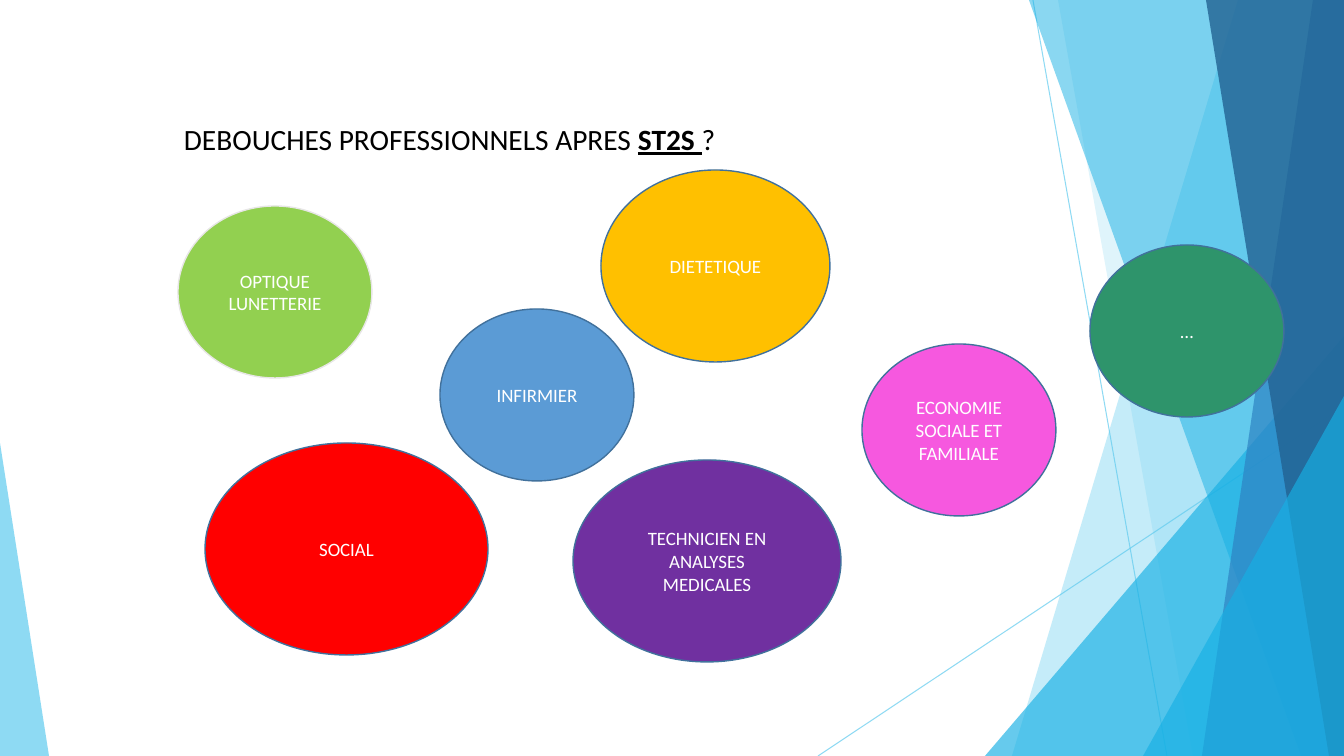
from dataclasses import dataclass

from lxml.etree import SubElement
from pptx import Presentation
from pptx.dml.color import RGBColor
from pptx.enum.shapes import MSO_CONNECTOR, MSO_SHAPE
from pptx.enum.text import MSO_ANCHOR, PP_ALIGN
from pptx.oxml.ns import qn
from pptx.shapes.autoshape import Shape
from pptx.shapes.shapetree import SlideShapes
from pptx.util import Emu, Pt

SLIDE_WIDTH = 1344
SLIDE_HEIGHT = 756
EMU_PER_PX = 12192000 / SLIDE_WIDTH


@dataclass(frozen=True)
class Theme:
    font: str = "Calibri"
    title_size: float = 21
    career_size: float = 13.5
    title_color: str = "000000"
    career_text: str = "FFFFFF"
    outline: str = "41719C"
    pale_outline: str = "E7E6E6"
    outline_width: float = 1
    ray_width: float = 0.75
    sky: str = "5FCBEF"
    cyan: str = "17B0E4"
    blue: str = "2E83C3"
    navy: str = "226292"
    green: str = "92D050"
    red: str = "FF0000"
    purple: str = "7030A0"
    amber: str = "FFC000"
    steel: str = "5B9BD5"
    pink: str = "F658DF"
    emerald: str = "2E946B"


THEME = Theme()


@dataclass(frozen=True)
class Ray:
    x1: int
    y1: int
    x2: int
    y2: int


@dataclass(frozen=True)
class Band:
    top_x: int
    bottom_x: int
    color: str
    opacity: int


@dataclass(frozen=True)
class Corner:
    left: int
    top: int
    width: int
    apex: float
    color: str
    opacity: int


@dataclass(frozen=True)
class Career:
    lines: tuple[str, ...]
    left: int
    top: int
    color: str
    width: int = 194
    height: int = 172
    outline: str = THEME.outline


RAYS = (
    Ray(1033, 0, 1167, SLIDE_HEIGHT),
    Ray(SLIDE_WIDTH, 406, 818, SLIDE_HEIGHT),
)

FACETS = (
    Band(1238, 1012, THEME.sky, 36),
    Band(1058, 1193, THEME.sky, 20),
    Corner(985, 336, 359, 1, THEME.cyan, 66),
    Band(1029, 1301, THEME.cyan, 50),
    Band(1313, 1202, THEME.blue, 70),
    Band(1206, 1329, THEME.navy, 80),
    Corner(1143, 396, 201, 1, THEME.cyan, 66),
    Corner(0, 443, 49, 0, THEME.sky, 70),
)

CAREERS = (
    Career(("OPTIQUE LUNETTERIE",), 178, 206, THEME.green, outline=THEME.pale_outline),
    Career(("SOCIAL",), 205, 443, THEME.red, 283, 212),
    Career(("TECHNICIEN EN", "ANALYSES", "MEDICALES"), 573, 460, THEME.purple, 268, 202),
    Career(("DIETETIQUE",), 601, 170, THEME.amber, 229, 192),
    Career(("INFIRMIER",), 440, 309, THEME.steel),
    Career(("ECONOMIE SOCIALE ET FAMILIALE",), 862, 344, THEME.pink),
    Career(("…",), 1090, 245, THEME.emerald),
)


def px(length: int) -> Emu:
    return Emu(round(length * EMU_PER_PX))


def rgb(color: str) -> RGBColor:
    return RGBColor.from_string(color)


def set_opacity(shape_properties, opacity: int) -> None:
    color = next(shape_properties.iter(qn("a:srgbClr")))
    SubElement(color, qn("a:alpha"), val=str(opacity * 1000))


def draw_ray(shapes: SlideShapes, ray: Ray) -> None:
    connector = shapes.add_connector(
        MSO_CONNECTOR.STRAIGHT, px(ray.x1), px(ray.y1), px(ray.x2), px(ray.y2)
    )
    connector.line.color.rgb = rgb(THEME.sky)
    connector.line.width = Pt(THEME.ray_width)
    properties = connector._element.spPr
    set_opacity(properties, 70)
    SubElement(properties, qn("a:effectLst"))


def build_band(shapes: SlideShapes, band: Band) -> Shape:
    builder = shapes.build_freeform(band.top_x, 0, scale=EMU_PER_PX)
    builder.add_line_segments(
        [(SLIDE_WIDTH, 0), (SLIDE_WIDTH, SLIDE_HEIGHT), (band.bottom_x, SLIDE_HEIGHT)]
    )
    return builder.convert_to_shape()


def build_corner(shapes: SlideShapes, corner: Corner) -> Shape:
    triangle = shapes.add_shape(
        MSO_SHAPE.ISOSCELES_TRIANGLE,
        px(corner.left),
        px(corner.top),
        px(corner.width),
        px(SLIDE_HEIGHT - corner.top),
    )
    triangle.adjustments[0] = corner.apex
    return triangle


def draw_facet(shapes: SlideShapes, facet: Band | Corner) -> None:
    if isinstance(facet, Band):
        surface = build_band(shapes, facet)
    else:
        surface = build_corner(shapes, facet)
    surface.shadow.inherit = False
    surface.fill.solid()
    surface.fill.fore_color.rgb = rgb(facet.color)
    surface.line.fill.background()
    set_opacity(surface._element.spPr, facet.opacity)


def draw_career(shapes: SlideShapes, career: Career) -> None:
    bubble = shapes.add_shape(
        MSO_SHAPE.OVAL, px(career.left), px(career.top), px(career.width), px(career.height)
    )
    bubble.shadow.inherit = False
    bubble.fill.solid()
    bubble.fill.fore_color.rgb = rgb(career.color)
    bubble.line.color.rgb = rgb(career.outline)
    bubble.line.width = Pt(THEME.outline_width)
    label = bubble.text_frame
    label.word_wrap = True
    label.vertical_anchor = MSO_ANCHOR.MIDDLE
    label.text = "\n".join(career.lines)
    for paragraph in label.paragraphs:
        paragraph.alignment = PP_ALIGN.CENTER
        paragraph.font.name = THEME.font
        paragraph.font.size = Pt(THEME.career_size)
        paragraph.font.color.rgb = rgb(THEME.career_text)


def draw_title(shapes: SlideShapes) -> None:
    title = shapes.add_textbox(px(174), px(116), px(797), px(45)).text_frame
    title.word_wrap = True
    question = title.paragraphs[0]
    question.font.name = THEME.font
    question.font.size = Pt(THEME.title_size)
    question.font.color.rgb = rgb(THEME.title_color)
    question.add_run().text = "DEBOUCHES PROFESSIONNELS APRES "
    diploma = question.add_run()
    diploma.text = "ST2S "
    diploma.font.bold = True
    diploma.font.underline = True
    question.add_run().text = "?"


def main() -> None:
    presentation = Presentation()
    presentation.slide_width = px(SLIDE_WIDTH)
    presentation.slide_height = px(SLIDE_HEIGHT)
    shapes = presentation.slides.add_slide(presentation.slide_layouts[6]).shapes
    for ray in RAYS:
        draw_ray(shapes, ray)
    for facet in FACETS:
        draw_facet(shapes, facet)
    for career in CAREERS:
        draw_career(shapes, career)
    draw_title(shapes)
    presentation.save("out.pptx")


if __name__ == "__main__":
    main()
